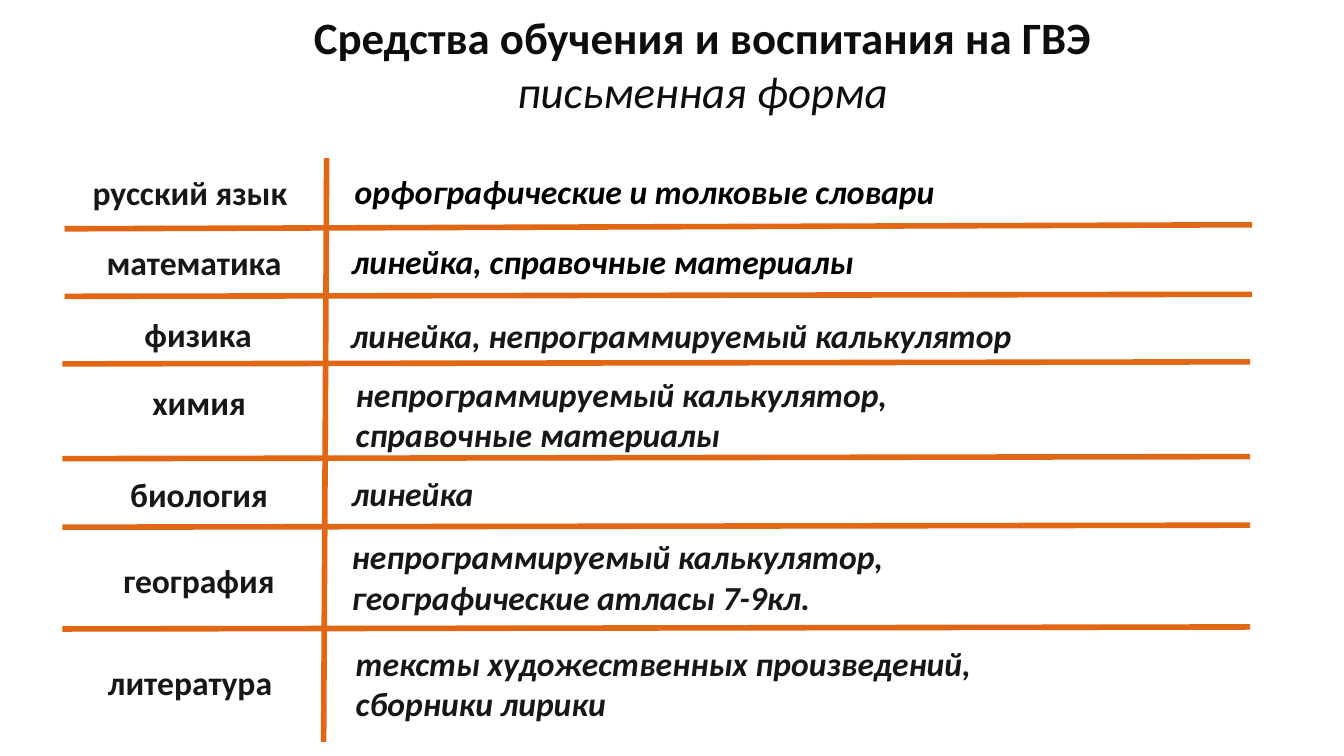
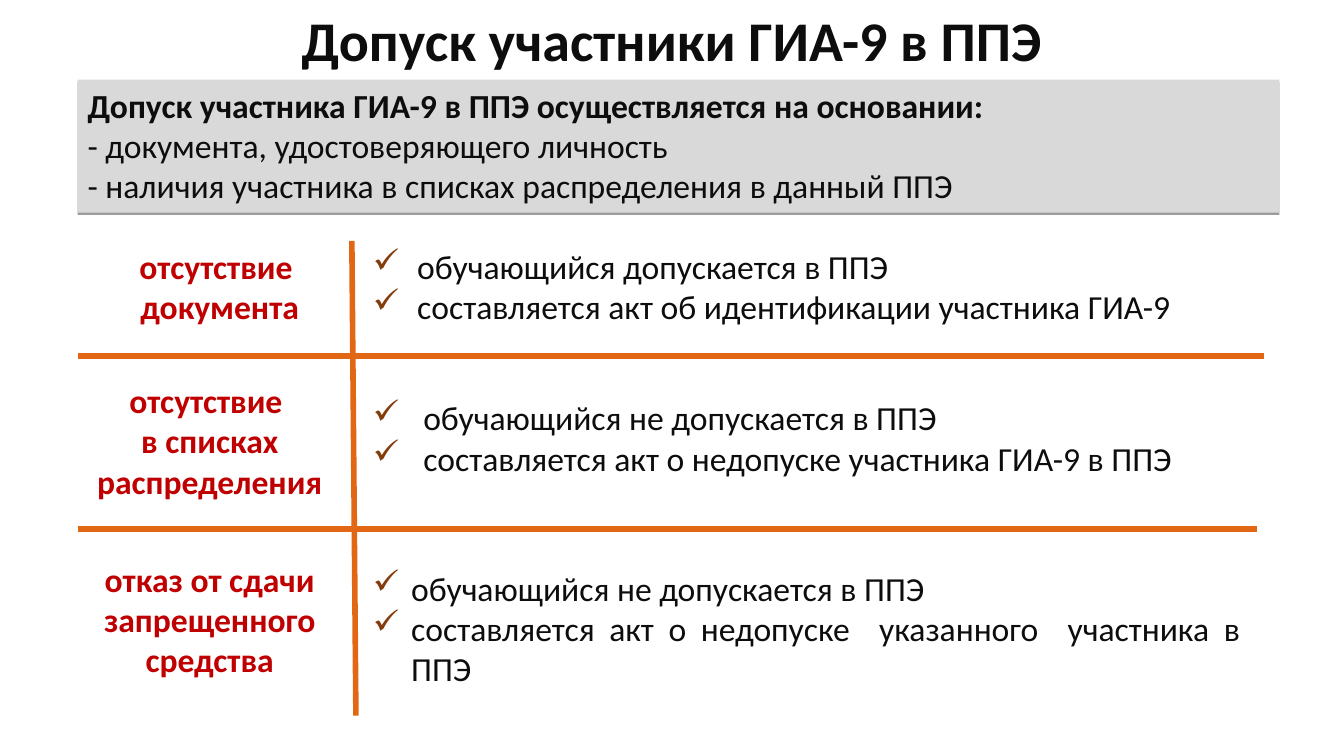
from dataclasses import dataclass

from lxml.etree import SubElement
from pptx import Presentation
from pptx.dml.color import RGBColor
from pptx.enum.shapes import MSO_CONNECTOR, MSO_SHAPE
from pptx.enum.text import MSO_ANCHOR, PP_ALIGN
from pptx.oxml.ns import qn
from pptx.util import Emu, Pt

EMU_PER_PX = 9144


@dataclass(frozen=True)
class Theme:
    font: str = "Calibri"
    ink: str = "0D0D0D"
    dark: str = "181717"
    black: str = "000000"
    red: str = "C00000"
    rule: str = "E26714"
    bullet: str = "843C0B"
    band: str = "D9D9D9"
    body: int = 24
    title: int = 32
    big_title: int = 40
    rule_width: int = 4


@dataclass(frozen=True)
class Box:
    x: int
    y: int
    w: int
    h: int


@dataclass(frozen=True)
class Label:
    lines: tuple
    cx: int
    cy: int
    w: int = 243
    color: str = Theme.dark


@dataclass(frozen=True)
class Note:
    lines: tuple
    x: int
    cy: int
    w: int = 777
    color: str = Theme.dark
    indent: int = 0


THEME = Theme()


def px(n):
    return Emu(n * EMU_PER_PX)


def rgb(color):
    return RGBColor.from_string(color)


def fill_text(tf, lines, color, size=THEME.body, bold=False, italic=False,
              align=PP_ALIGN.LEFT):
    tf.word_wrap = True
    tf.text = "\n".join(lines)
    for p in tf.paragraphs:
        p.alignment = align
        for r in p.runs:
            r.font.name = THEME.font
            r.font.size = Pt(size)
            r.font.color.rgb = rgb(color)
            r.font.bold = bold
            r.font.italic = italic


def add_text(s, box, lines, color, anchor=MSO_ANCHOR.MIDDLE, **style):
    tb = s.shapes.add_textbox(px(box.x), px(box.y), px(box.w), px(box.h))
    tf = tb.text_frame
    tf.vertical_anchor = anchor
    fill_text(tf, lines, color, **style)
    return tf


def add_rule(s, x1, y1, x2, y2):
    ln = s.shapes.add_connector(MSO_CONNECTOR.STRAIGHT, px(x1), px(y1), px(x2), px(y2))
    ln.line.color.rgb = rgb(THEME.rule)
    ln.line.width = Pt(THEME.rule_width)
    SubElement(ln._element.spPr, qn("a:effectLst"))


def add_check(p, indent):
    pPr = p._p.get_or_add_pPr()
    pPr.set("marL", str(px(indent)))
    pPr.set("indent", str(-px(indent)))
    clr = SubElement(pPr, qn("a:buClr"))
    SubElement(clr, qn("a:srgbClr"), val=THEME.bullet)
    SubElement(pPr, qn("a:buChar"), char="✓")


def add_title(s, box, lines, size):
    tf = add_text(s, box, lines, THEME.ink, MSO_ANCHOR.TOP, size=size, bold=True,
                  align=PP_ALIGN.CENTER)
    for p in tf.paragraphs[1:]:
        for r in p.runs:
            r.font.bold = False
            r.font.italic = True


def add_label(s, box, label):
    h = 10 + 40 * len(label.lines)
    place = Box(box.x + label.cx - label.w // 2, box.y + label.cy - h // 2, label.w, h)
    add_text(s, place, label.lines, label.color, bold=True, align=PP_ALIGN.CENTER)


def add_note(s, box, note):
    h = 10 + 40 * len(note.lines)
    place = Box(box.x + note.x, box.y + note.cy - h // 2, note.w, h)
    checked = note.indent > 0
    tf = add_text(s, place, note.lines, note.color, bold=not checked, italic=not checked,
                  align=PP_ALIGN.JUSTIFY if checked else PP_ALIGN.LEFT)
    if checked:
        for p in tf.paragraphs:
            add_check(p, note.indent)


def add_grid(s, box, divider, rules, rows):
    top_x, bottom_x = divider
    add_rule(s, box.x + top_x, box.y, box.x + bottom_x, box.y + box.h)
    for dx, w, left_y, right_y in rules:
        x = box.x + dx
        add_rule(s, x, box.y + left_y, x + w, box.y + right_y)
    for label, note in rows:
        add_label(s, box, label)
        add_note(s, box, note)


def add_band(s, box, lines):
    sp = s.shapes.add_shape(MSO_SHAPE.RECTANGLE, px(box.x), px(box.y), px(box.w), px(box.h))
    sp.fill.solid()
    sp.fill.fore_color.rgb = rgb(THEME.band)
    sp.line.fill.background()
    sp.shadow.inherit = False
    effects = sp._element.spPr.find(qn("a:effectLst"))
    shadow = SubElement(effects, qn("a:outerShdw"), blurRad="0", dist=str(Pt(1.6)),
                        dir="5400000", rotWithShape="0")
    clr = SubElement(shadow, qn("a:srgbClr"), val=THEME.black)
    SubElement(clr, qn("a:alpha"), val="38000")
    tf = sp.text_frame
    tf.vertical_anchor = MSO_ANCHOR.TOP
    fill_text(tf, lines, THEME.ink)
    for r in tf.paragraphs[0].runs:
        r.font.bold = True


def build_aids(s):
    add_title(s, Box(287, 5, 820, 118),
              ("Средства обучения и воспитания на ГВЭ", "письменная форма"), THEME.title)
    rules = [(dx, 1178, y, y - drop) for dx, y, drop in (
        (2, 70, 4), (2, 137, 2), (0, 204, 2), (0, 298, 2), (0, 366, 2), (0, 467, 2))]
    rows = [
        (Label(("русский язык",), 126, 34),
         Note(("орфографические и толковые словари",), 280, 33, color=THEME.black)),
        (Label(("математика",), 130, 103),
         Note(("линейка, справочные материалы",), 277, 102, color=THEME.black)),
        (Label(("физика",), 134, 174),
         Note(("линейка, непрограммируемый калькулятор",), 276, 175)),
        (Label(("химия",), 135, 242),
         Note(("непрограммируемый калькулятор,", "справочные материалы"), 281, 254)),
        (Label(("биология",), 135, 333),
         Note(("линейка",), 277, 332)),
        (Label(("география",), 135, 418),
         Note(("непрограммируемый калькулятор, географические атласы 7-9кл.",), 277, 415)),
        (Label(("литература",), 126, 520),
         Note(("тексты художественных произведений,", "сборники лирики"), 281, 521)),
    ]
    add_grid(s, Box(62, 157, 1180, 579), (262, 259), rules, rows)


def build_admission(s):
    add_title(s, Box(266, 1, 800, 77), ("Допуск участники ГИА-9 в ППЭ",), THEME.big_title)
    add_band(s, Box(77, 79, 1192, 132), (
        "Допуск участника ГИА-9 в ППЭ осуществляется на основании:",
        "- документа, удостоверяющего личность",
        "- наличия участника в списках распределения в данный ППЭ"))
    rules = [(0, 1177, 114, 114), (0, 1170, 286, 286)]
    rows = [
        (Label(("отсутствие ", "документа"), 141, 45, 360, THEME.red),
         Note(("обучающийся допускается в ППЭ",
               "составляется акт об идентификации участника ГИА-9"),
              283, 45, 894, THEME.ink, 44)),
        (Label(("отсутствие ", "в списках распределения"), 131, 198, 360, THEME.red),
         Note(("обучающийся не допускается в ППЭ",
               "составляется акт о недопуске участника ГИА-9 в ППЭ"),
              283, 195, 880, THEME.ink, 50)),
        (Label(("отказ от сдачи запрещенного средства",), 131, 375, 316, THEME.red),
         Note(("обучающийся не допускается в ППЭ",
               "составляется акт о недопуске  указанного  участника в ППЭ"),
              283, 384, 880, THEME.ink, 38)),
    ]
    add_grid(s, Box(77, 239, 1177, 471), (272, 276), rules, rows)


def main():
    prs = Presentation()
    prs.slide_width = px(1333)
    prs.slide_height = px(750)
    blank = prs.slide_layouts[6]
    for build in (build_aids, build_admission):
        build(prs.slides.add_slide(blank))
    prs.save("out.pptx")


if __name__ == "__main__":
    main()
